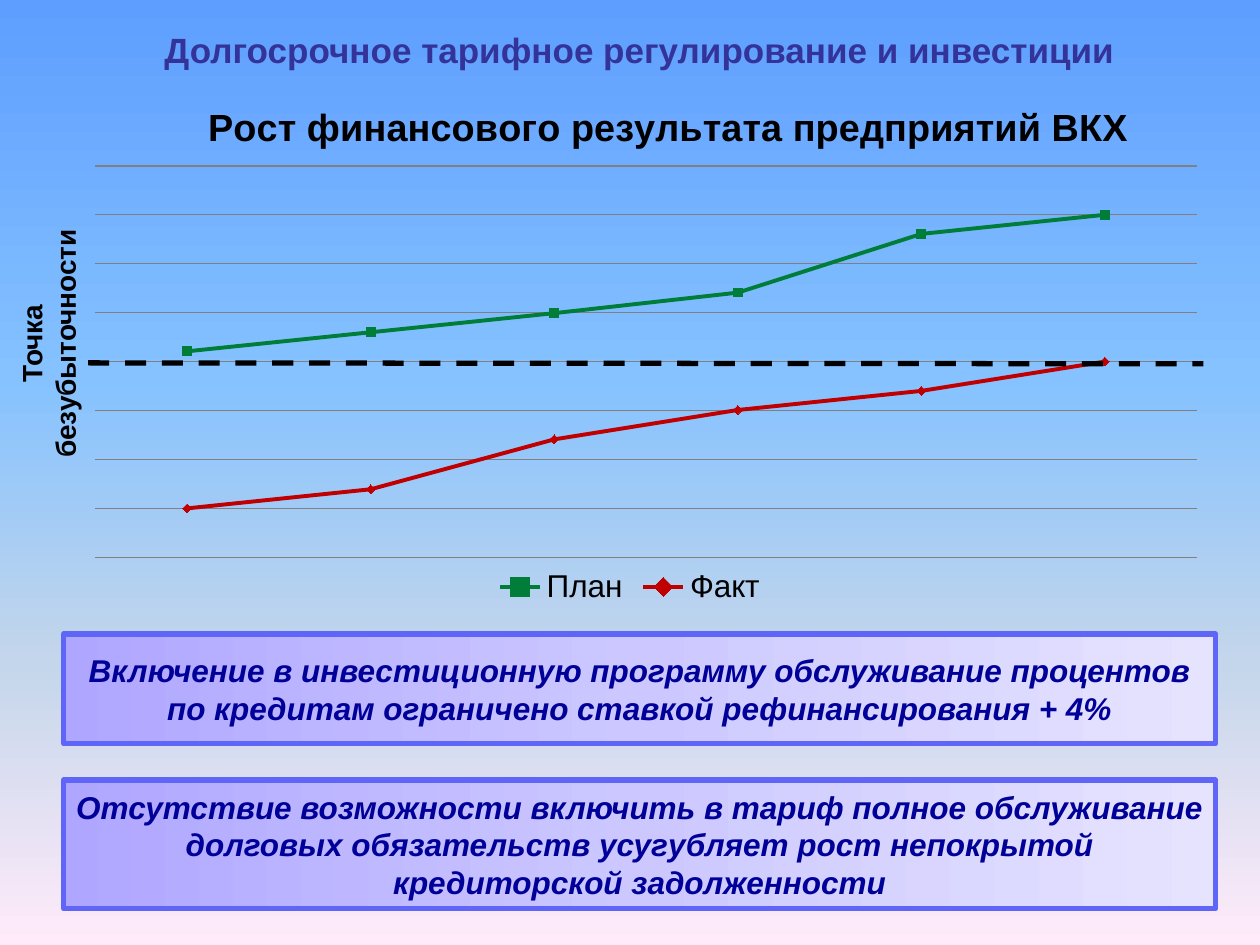
"""Build the slide on long-term tariff regulation: a plan and fact chart with two conclusions."""
import lxml.etree
import pptx
import pptx.chart.data
import pptx.dml.color
import pptx.enum.chart
import pptx.enum.dml
import pptx.enum.shapes
import pptx.enum.text
import pptx.oxml.ns
import pptx.util

COLORS = {
    "heading": "333399", "black": "000000", "plan": "007E39", "fact": "C00000",
    "grid": "808080", "border": "5F66F7", "conclusion": "000099",
}
SKY = [(0, "5E9EFF"), (40, "85C2FF"), (70, "C4D6EB"), (100, "FFEBFA")]
LILAC = [(0, "AFA6FF"), (50, "CCC8FF"), (100, "E6E3FF")]
RGB = pptx.dml.color.RGBColor.from_string
Pt = pptx.util.Pt
qn = pptx.oxml.ns.qn


def set_gradient(fill, element, stops, angle):
    fill.gradient()
    gradient = next(element.iter(qn("a:gradFill")))
    stop_list = gradient.find(qn("a:gsLst"))
    for old_stop in list(stop_list):
        stop_list.remove(old_stop)
    for position, color in stops:
        stop = lxml.etree.SubElement(stop_list, qn("a:gs"), pos=str(position * 1000))
        lxml.etree.SubElement(stop, qn("a:srgbClr"), val=color)
    gradient.find(qn("a:lin")).set("ang", str(angle * 60000))


def write(frame, text, size, color, italic=False):
    frame.text = text
    frame.word_wrap = True
    frame.vertical_anchor = pptx.enum.text.MSO_ANCHOR.MIDDLE
    paragraph = frame.paragraphs[0]
    paragraph.alignment = pptx.enum.text.PP_ALIGN.CENTER
    font = paragraph.runs[0].font
    font.name, font.size, font.bold, font.italic = "Arial", Pt(size), True, italic
    font.color.rgb = RGB(COLORS[color])


deck = pptx.Presentation()
deck.slide_width, deck.slide_height = pptx.util.Inches(10), pptx.util.Inches(7.5)
col, row = deck.slide_width // 100, deck.slide_height // 100
slide = deck.slides.add_slide(deck.slide_layouts[6])
set_gradient(slide.background.fill, slide.element, SKY, 90)

heading = slide.shapes.add_textbox(int(5.8 * col), int(1.6 * row), int(89.9 * col), int(7.2 * row))
write(heading.text_frame, "Долгосрочное тарифное регулирование и инвестиции", 20, "heading")

results = pptx.chart.data.CategoryChartData()
results.categories = ["1", "2", "3", "4", "5", "6"]
results.add_series("План", [7, 20, 33, 47, 87, 100])
results.add_series("Факт", [-100, -87, -53, -33, -20, 0])
chart = slide.shapes.add_chart(
    pptx.enum.chart.XL_CHART_TYPE.LINE_MARKERS,
    int(2.75 * col), int(10.15 * row), int(94.5 * col), int(54.5 * row), results,
).chart
chart.font.name, chart.font.size = "Arial", Pt(18)
chart.font.color.rgb = RGB(COLORS["black"])
chart.has_title = True
write(chart.chart_title.text_frame, "Рост финансового результата предприятий ВКХ", 21.6, "black")
chart.has_legend = True
chart.legend.position = pptx.enum.chart.XL_LEGEND_POSITION.BOTTOM
chart.legend.include_in_layout = False
chart.plots[0].vary_by_categories = False

step = 33.33
profit = chart.value_axis
profit.minimum_scale, profit.maximum_scale, profit.major_unit = -4 * step, 4 * step, step
profit.has_major_gridlines = True
profit.major_gridlines.format.line.color.rgb = RGB(COLORS["grid"])
profit.major_gridlines.format.line.width = Pt(0.75)
profit.visible = False
periods = chart.category_axis
periods.tick_label_position = pptx.enum.chart.XL_TICK_LABEL_POSITION.NONE
periods.major_tick_mark = pptx.enum.chart.XL_TICK_MARK.NONE
periods.format.line.fill.background()

marks = pptx.enum.chart.XL_MARKER_STYLE
for series, color, mark in zip(chart.plots[0].series, ("plan", "fact"), (marks.SQUARE, marks.DIAMOND)):
    series.smooth = False
    series.format.line.color.rgb = RGB(COLORS[color])
    series.format.line.width = Pt(2.25)
    series.marker.style, series.marker.size = mark, 5
    series.marker.format.fill.solid()
    series.marker.format.fill.fore_color.rgb = RGB(COLORS[color])
    series.marker.format.line.color.rgb = RGB(COLORS[color])

plot_place = {"layoutTarget": "inner", "xMode": "edge", "yMode": "edge",
              "x": "0.051", "y": "0.136", "w": "0.925", "h": "0.76"}
title_place = {"xMode": "edge", "yMode": "edge", "x": "0.14", "y": "-0.01"}
plot_area = next(chart.element.iter(qn("c:plotArea")))
title = next(chart.element.iter(qn("c:title")))
for part, index, place in ((plot_area, 0, plot_place), (title, 1, title_place)):
    for old_layout in part.findall(qn("c:layout")):
        part.remove(old_layout)
    layout = lxml.etree.Element(qn("c:layout"))
    manual = lxml.etree.SubElement(layout, qn("c:manualLayout"))
    for key, value in place.items():
        lxml.etree.SubElement(manual, qn("c:" + key), val=value)
    part.insert(index, layout)

break_even = slide.shapes.add_connector(
    pptx.enum.shapes.MSO_CONNECTOR.STRAIGHT,
    7 * col, int(38.4 * row), int(95.5 * col), int(38.5 * row),
)
break_even.line.color.rgb = RGB(COLORS["black"])
break_even.line.width = Pt(3)
break_even.line.dash_style = pptx.enum.dml.MSO_LINE.DASH
lxml.etree.SubElement(break_even.element.spPr, qn("a:effectLst"))

break_even_label = slide.shapes.add_textbox(int(-7.2 * col), int(32.1 * row), 22 * col, int(8.5 * row))
break_even_label.rotation = 270
write(break_even_label.text_frame, "Точка безубыточности", 16, "black")

conclusions = [
    (67.1, 11.6, "Включение в инвестиционную программу обслуживание процентов "
                 "по кредитам ограничено ставкой рефинансирования + 4%"),
    (82.55, 13.6, "Отсутствие возможности включить в тариф полное обслуживание "
                  "долговых обязательств усугубляет рост непокрытой кредиторской задолженности"),
]
for top, height, text in conclusions:
    conclusion = slide.shapes.add_shape(
        pptx.enum.shapes.MSO_SHAPE.RECTANGLE,
        int(5.05 * col), int(top * row), int(91.45 * col), int(height * row),
    )
    conclusion.shadow.inherit = False
    set_gradient(conclusion.fill, conclusion.element, LILAC, 0)
    conclusion.line.color.rgb = RGB(COLORS["border"])
    conclusion.line.width = Pt(3)
    write(conclusion.text_frame, text, 18, "conclusion", italic=True)
    conclusion.text_frame.margin_left = conclusion.text_frame.margin_right = int(0.8 * col)

deck.save("out.pptx")
